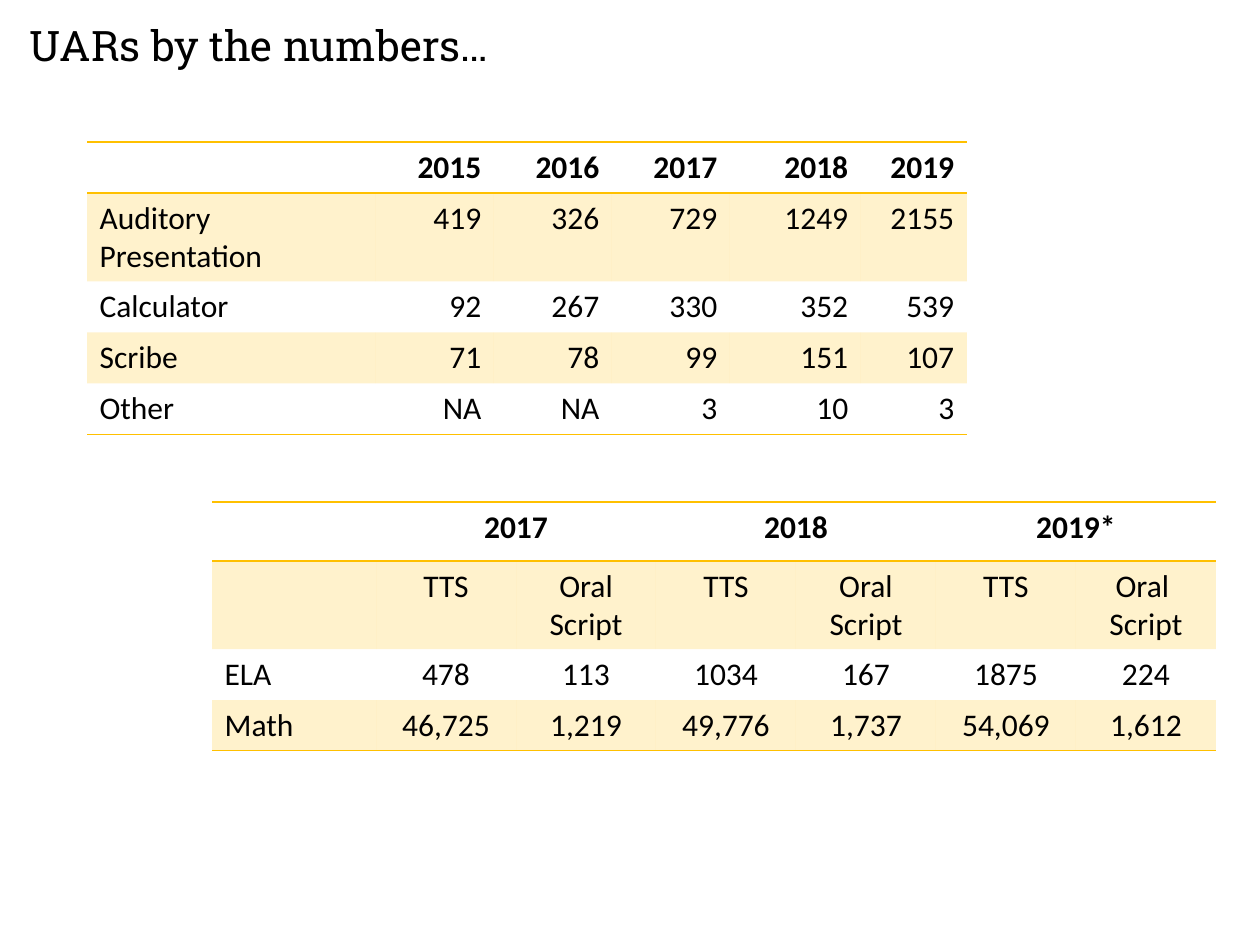
from lxml import etree
from pptx import Presentation
from pptx.dml.color import RGBColor
from pptx.enum.text import MSO_ANCHOR, PP_ALIGN
from pptx.oxml.ns import qn
from pptx.util import Pt

LEFT, CENTER, RIGHT = PP_ALIGN.LEFT, PP_ALIGN.CENTER, PP_ALIGN.RIGHT
MIDDLE = MSO_ANCHOR.MIDDLE
EMU_PER_PX = 914400 / 126
PLAIN_TABLE_STYLE = "{2D5ABB26-0587-4C30-8999-92F81FD0307C}"
COLORS = {"text": "000000", "gold": "FFC000"}

REQUESTS = [
    ["", "2015", "2016", "2017", "2018", "2019"],
    ["Auditory Presentation", "419", "326", "729", "1249", "2155"],
    ["Calculator", "92", "267", "330", "352", "539"],
    ["Scribe", "71", "78", "99", "151", "107"],
    ["Other", "NA", "NA", "3", "10", "3"],
]
SUBJECTS = [
    ["", "2017", "", "2018", "", "2019*", ""],
    ["", "TTS", "Oral Script", "TTS", "Oral Script", "TTS", "Oral \nScript"],
    ["ELA", "478", "113", "1034", "167", "1875", "224"],
    ["Math", "46,725", "1,219", "49,776", "1,737", "54,069", "1,612"],
]


def px(length):
    return round(length * EMU_PER_PX)


class SlideBuilder:
    """Holds the style and the current slide, and adds elements to it."""

    def __init__(self, deck):
        self.page = deck.slides.add_slide(deck.slide_layouts[6])
        self.title_font, self.body_font = "Roboto Slab", "Calibri"

    def format_text(self, frame, font, size, align, bold=False):
        for para in frame.paragraphs:
            para.alignment = align
            for span in para.runs:
                span.font.name = font
                span.font.size = Pt(size)
                span.font.bold = bold
                span.font.color.rgb = RGBColor.from_string(COLORS["text"])

    def title(self, text, left, top, width, height):
        box = self.page.shapes.add_textbox(px(left), px(top), px(width), px(height))
        frame = box.text_frame
        frame.word_wrap = True
        frame.vertical_anchor = MIDDLE
        frame.margin_left = frame.margin_right = 0
        frame.margin_top = frame.margin_bottom = 0
        frame.text = text
        frame.paragraphs[0].line_spacing = 0.9
        self.format_text(frame, self.title_font, 24, LEFT)

    def rule(self, cell, side):
        line = etree.SubElement(cell._tc.get_or_add_tcPr(), qn(f"a:{side}"), w=str(Pt(1)))
        fill = etree.SubElement(line, qn("a:solidFill"))
        etree.SubElement(fill, qn("a:srgbClr"), val=COLORS["gold"])

    def shade(self, cell, shaded):
        if not shaded:
            cell.fill.background()
            return
        cell.fill.solid()
        cell.fill.fore_color.rgb = RGBColor.from_string(COLORS["gold"])
        color = cell._tc.tcPr.find(f"{qn('a:solidFill')}/{qn('a:srgbClr')}")
        etree.SubElement(color, qn("a:alpha"), val="20000")

    def table(self, rows, left, top, widths, heights, align, header_span=1):
        frame = self.page.shapes.add_table(
            len(rows), len(widths), px(left), px(top), px(sum(widths)), px(sum(heights)))
        table = frame.table
        table._tbl.tblPr.find(qn("a:tableStyleId")).text = PLAIN_TABLE_STYLE
        for column, width in zip(table.columns, widths):
            column.width = px(width)
        for row, height in zip(table.rows, heights):
            row.height = px(height)
        for row_index, row in enumerate(rows):
            header = row_index == 0
            for column_index, text in enumerate(row):
                cell = table.cell(row_index, column_index)
                if text:
                    cell.text = text
                self.format_text(cell.text_frame, self.body_font, 18,
                                 align if column_index else LEFT, header)
                if header:
                    self.rule(cell, "lnT")
                if header or row_index == len(rows) - 1:
                    self.rule(cell, "lnB")
                self.shade(cell, row_index % 2 == 1)
        if header_span > 1:
            for first in range(1, len(widths), header_span):
                table.cell(0, first).merge(table.cell(0, first + header_span - 1))


def main():
    deck = Presentation()
    deck.slide_width, deck.slide_height = px(1260), px(945)
    builder = SlideBuilder(deck)
    builder.title("UARs by the numbers…", 30, 22, 1198, 51)
    builder.table(REQUESTS, 87, 142, [289, 118, 118, 118, 131, 106], [51] * 5, RIGHT)
    builder.table(SUBJECTS, 212, 502, [164] + [140] * 6, [59, 58, 51, 28], CENTER, 2)
    deck.save("out.pptx")


if __name__ == "__main__":
    main()
